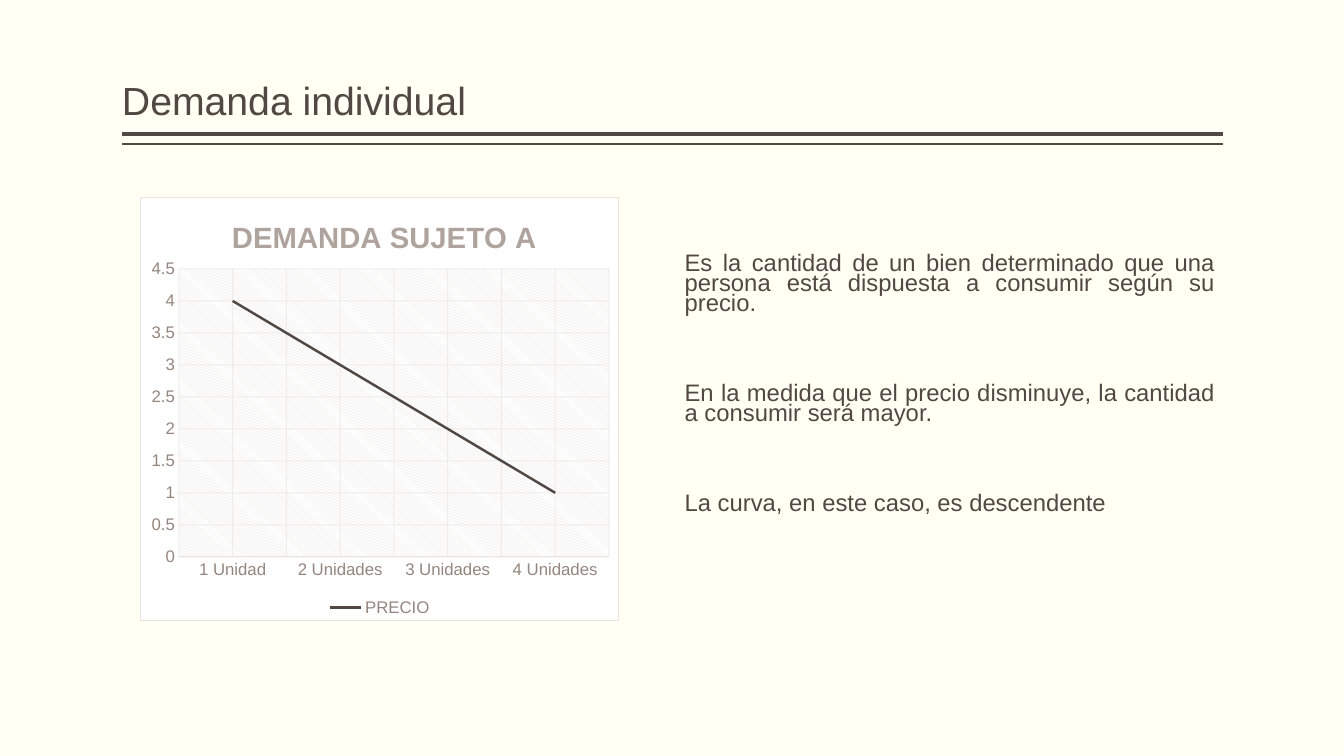
from copy import deepcopy

from pptx import Presentation
from pptx.chart.data import CategoryChartData
from pptx.dml.color import RGBColor
from pptx.enum.chart import XL_CHART_TYPE, XL_LEGEND_POSITION, XL_TICK_MARK
from pptx.enum.shapes import MSO_CONNECTOR
from pptx.enum.text import MSO_ANCHOR, PP_ALIGN
from pptx.oxml import parse_xml
from pptx.oxml.ns import nsdecls, qn
from pptx.util import Inches, Pt

TITLE = "Demanda individual"
BODY = [
    "Es la cantidad de un bien determinado que una persona está dispuesta a consumir según su precio.",
    "En la medida que el precio disminuye, la cantidad a consumir será mayor.",
    "La curva, en este caso, es descendente",
]
HEAD = "DEMANDA SUJETO A"
CATS = ["1 Unidad", "2 Unidades", "3 Unidades", "4 Unidades"]
SERIES = ("PRECIO", [4, 3, 2, 1])
RULES = [(1.33, 3), (1.43, 1)]
LEFT, WIDE = 1.21, 10.92
TITLE_BOX = (LEFT, 0.08, WIDE, 1.2)
BODY_BOX = (6.67, 2.49, 5.38, 2.95)
CHART_BOX = (1.39, 1.95, 4.75, 4.21)
HEX = {"back": "FFFFF3", "ink": "514843", "label": "94867E",
       "head": "AFA39D", "grid": "E6E3E1", "white": "FFFFFF"}
FACE = "Arial"
FRAME = {"word_wrap": True, "margin_left": 0, "margin_right": 0,
         "margin_top": Inches(0.05), "margin_bottom": Inches(0.05)}
SCALE = {"minimum_scale": 0, "maximum_scale": 4.5, "major_unit": 0.5}
TICKS = {"major_tick_mark": XL_TICK_MARK.NONE, "minor_tick_mark": XL_TICK_MARK.NONE,
         "has_major_gridlines": True}


def apply(item, values):
    """Set each named value on the item."""
    for name, value in values.items():
        setattr(item, name, value)


def color(key):
    """Return the named colour."""
    return RGBColor.from_string(HEX[key])


def style(font, size, key, bold=False):
    """Set face, size, weight and colour."""
    apply(font, {"name": FACE, "size": Pt(size), "bold": bold})
    font.color.rgb = color(key)


def stroke(line, key, width):
    """Set line colour and width."""
    line.color.rgb = color(key)
    line.width = Pt(width)


def write(slide, box, texts, size, anchor, form, gap=0, indent=0):
    """Add a text box with one paragraph per text."""
    frame = slide.shapes.add_textbox(*map(Inches, box)).text_frame
    apply(frame, {**FRAME, "vertical_anchor": anchor})
    for i, text in enumerate(texts):
        para = frame.add_paragraph() if i else frame.paragraphs[0]
        apply(para, {**form, "space_before": Pt(gap if i else 0)})
        if indent:
            para._p.get_or_add_pPr().set("marL", str(Inches(indent)))
        run = para.add_run()
        run.text = text
        style(run.font, size, "ink")


def place(part, index, inner="", **spots):
    """Give a chart part a manual layout."""
    for old in part.findall(qn("c:layout")):
        part.remove(old)
    modes = "".join(f'<c:{k}Mode val="edge"/>' for k in "xy")
    sizes = "".join(f'<c:{k} val="{v}"/>' for k, v in spots.items())
    part.insert(index, parse_xml(
        f'<c:layout {nsdecls("c")}><c:manualLayout>{inner}{modes}{sizes}'
        '</c:manualLayout></c:layout>'))


def surface(fill, line):
    """Return chart shape properties."""
    return parse_xml(f'<c:spPr {nsdecls("c", "a")}>{fill}<a:ln{line}</a:ln></c:spPr>')


def solid(key):
    """Return a solid fill."""
    return f'<a:solidFill><a:srgbClr val="{HEX[key]}"/></a:solidFill>'


def draw(slide):
    """Add the demand chart."""
    data = CategoryChartData()
    data.categories = CATS
    data.add_series(*SERIES)
    chart = slide.shapes.add_chart(
        XL_CHART_TYPE.LINE, *map(Inches, CHART_BOX), data).chart
    style(chart.font, 10, "ink")
    apply(chart, {"has_title": True, "has_legend": True})
    run = chart.chart_title.text_frame.paragraphs[0].add_run()
    run.text = HEAD
    style(run.font, 21, "head", True)
    place(chart.chart_title._element, 1, x=0.18, y=0.04)
    apply(chart.legend, {"position": XL_LEGEND_POSITION.BOTTOM,
                         "include_in_layout": False})
    style(chart.legend.font, 12, "label")

    cat, val = chart.category_axis, chart.value_axis
    for axis in (cat, val):
        apply(axis, TICKS)
        style(axis.tick_labels.font, 12, "label")
        grid = axis.major_gridlines.format.line
        stroke(grid, "grid", 0.75)
        for tint in axis._element.find(qn("c:majorGridlines")).iter(qn("a:srgbClr")):
            tint.append(parse_xml(f'<a:alpha {nsdecls("a")} val="54000"/>'))
    apply(val, SCALE)
    val.format.line.fill.background()
    stroke(cat.format.line, "grid", 0.75)
    cat.has_minor_gridlines = True
    major = cat._element.find(qn("c:majorGridlines"))
    cat._element.find(qn("c:minorGridlines")).append(deepcopy(major.find(qn("c:spPr"))))

    plot = chart.plots[0]
    plot.vary_by_categories = False
    line = plot.series[0]
    line.smooth = False
    stroke(line.format.line, "ink", 1.75)

    root = chart._chartSpace.find(qn("c:chart"))
    area = root.find(qn("c:plotArea"))
    place(area, 0, '<c:layoutTarget val="inner"/>', x=0.08, y=0.17, w=0.9, h=0.68)
    area.append(surface(
        f'<a:pattFill prst="ltDnDiag"><a:fgClr><a:srgbClr val="{HEX["grid"]}"/></a:fgClr>'
        f'<a:bgClr><a:srgbClr val="{HEX["white"]}"/></a:bgClr></a:pattFill>',
        "><a:noFill/>"))
    root.addnext(surface(solid("white"), f' w="{Pt(0.75)}">{solid("grid")}'))


def main():
    """Build and save the slide."""
    deck = Presentation()
    apply(deck, {"slide_width": Inches(13.33), "slide_height": Inches(7.5)})
    slide = deck.slides.add_slide(deck.slide_layouts[6])
    slide.background.fill.solid()
    slide.background.fill.fore_color.rgb = color("back")
    for y, width in RULES:
        rule = slide.shapes.add_connector(
            MSO_CONNECTOR.STRAIGHT, *map(Inches, (LEFT + WIDE, y, LEFT, y)))
        stroke(rule.line, "ink", width)
        rule._element.spPr.append(parse_xml(f'<a:effectLst {nsdecls("a")}/>'))
    write(slide, TITLE_BOX, [TITLE], 28, MSO_ANCHOR.BOTTOM, {"line_spacing": 0.9})
    write(slide, BODY_BOX, BODY, 17, MSO_ANCHOR.TOP,
          {"line_spacing": 0.7, "alignment": PP_ALIGN.JUSTIFY}, 50, 0.12)
    draw(slide)
    deck.save("out.pptx")


if __name__ == "__main__":
    main()
